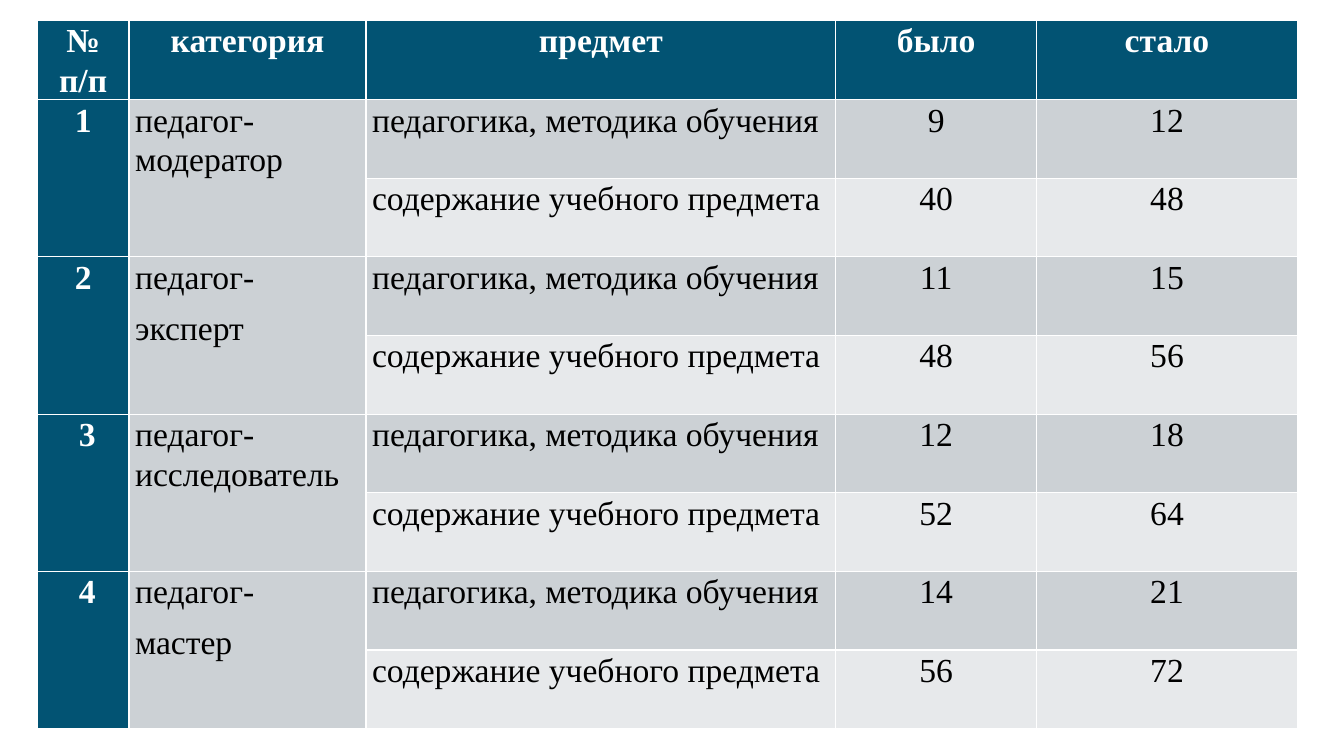
from dataclasses import dataclass

from pptx import Presentation
from pptx.dml.color import RGBColor
from pptx.enum.text import PP_ALIGN
from pptx.util import Pt

CENTER = PP_ALIGN.CENTER
JUSTIFY = PP_ALIGN.JUSTIFY
PX = 9144  # EMU per px, 100 px to the inch


@dataclass(frozen=True)
class Theme:
    font: str = "Times New Roman"
    size: int = 24
    accent: str = "025373"
    dark_band: str = "CCD1D5"
    light_band: str = "E7E9EB"
    light_text: str = "FFFFFF"
    dark_text: str = "000000"


theme = Theme()

HEADINGS = ["№ п/п", "категория", "предмет", "было", "стало"]
SUBJECTS = ["педагогика, методика обучения", "содержание учебного предмета"]
# Number, category, then (before, after) for each subject
CATEGORIES = [
    ("1", "педагог-модератор", [(9, 12), (40, 48)]),
    ("2", "педагог-\nэксперт", [(11, 15), (48, 56)]),
    (" 3", "педагог-исследователь", [(12, 18), (52, 64)]),
    (" 4", "педагог-\nмастер", [(14, 21), (56, 72)]),
]
COLUMN_WIDTHS = [91, 235, 466, 199, 259]
ROW_HEIGHT = 78


def fill_cell(cell, text, fill, color, alignment, bold=False):
    cell.margin_left = cell.margin_right = 6 * PX
    cell.margin_top = cell.margin_bottom = 0
    cell.fill.solid()
    cell.fill.fore_color.rgb = RGBColor.from_string(fill)
    cell.text = text
    for paragraph in cell.text_frame.paragraphs:
        paragraph.alignment = alignment
        paragraph.line_spacing = 1.07
        paragraph.space_after = Pt(8)
        paragraph.font.name = theme.font
        paragraph.font.size = Pt(theme.size)
        paragraph.font.bold = bold
        paragraph.font.color.rgb = RGBColor.from_string(color)


# Slide
presentation = Presentation()
presentation.slide_width = 1333 * PX
presentation.slide_height = 750 * PX
slide = presentation.slides.add_slide(presentation.slide_layouts[6])

# Table grid; the default table style draws the white rules
row_count = 1 + len(CATEGORIES) * len(SUBJECTS)
table = slide.shapes.add_table(
    row_count, len(HEADINGS), 37 * PX, 20 * PX,
    sum(COLUMN_WIDTHS) * PX, row_count * ROW_HEIGHT * PX,
).table
table.first_col = True
for column, width in zip(table.columns, COLUMN_WIDTHS):
    column.width = width * PX
for row in table.rows:
    row.height = ROW_HEIGHT * PX

# Header row
for column, heading in enumerate(HEADINGS):
    fill_cell(table.cell(0, column), heading, theme.accent, theme.light_text, CENTER, True)

# One pair of rows for each category
for index, (number, category, counts) in enumerate(CATEGORIES):
    top = 1 + index * len(SUBJECTS)
    for column in (0, 1):
        table.cell(top, column).merge(table.cell(top + 1, column))
    fill_cell(table.cell(top, 0), number, theme.accent, theme.light_text, CENTER, True)
    fill_cell(table.cell(top, 1), category, theme.dark_band, theme.dark_text, JUSTIFY)

    bands = (theme.dark_band, theme.light_band)
    for offset, (subject, values, band) in enumerate(zip(SUBJECTS, counts, bands)):
        fill_cell(table.cell(top + offset, 2), subject, band, theme.dark_text, JUSTIFY)
        for column, value in enumerate(values, start=3):
            fill_cell(table.cell(top + offset, column), str(value), band, theme.dark_text, CENTER)

presentation.save("out.pptx")
